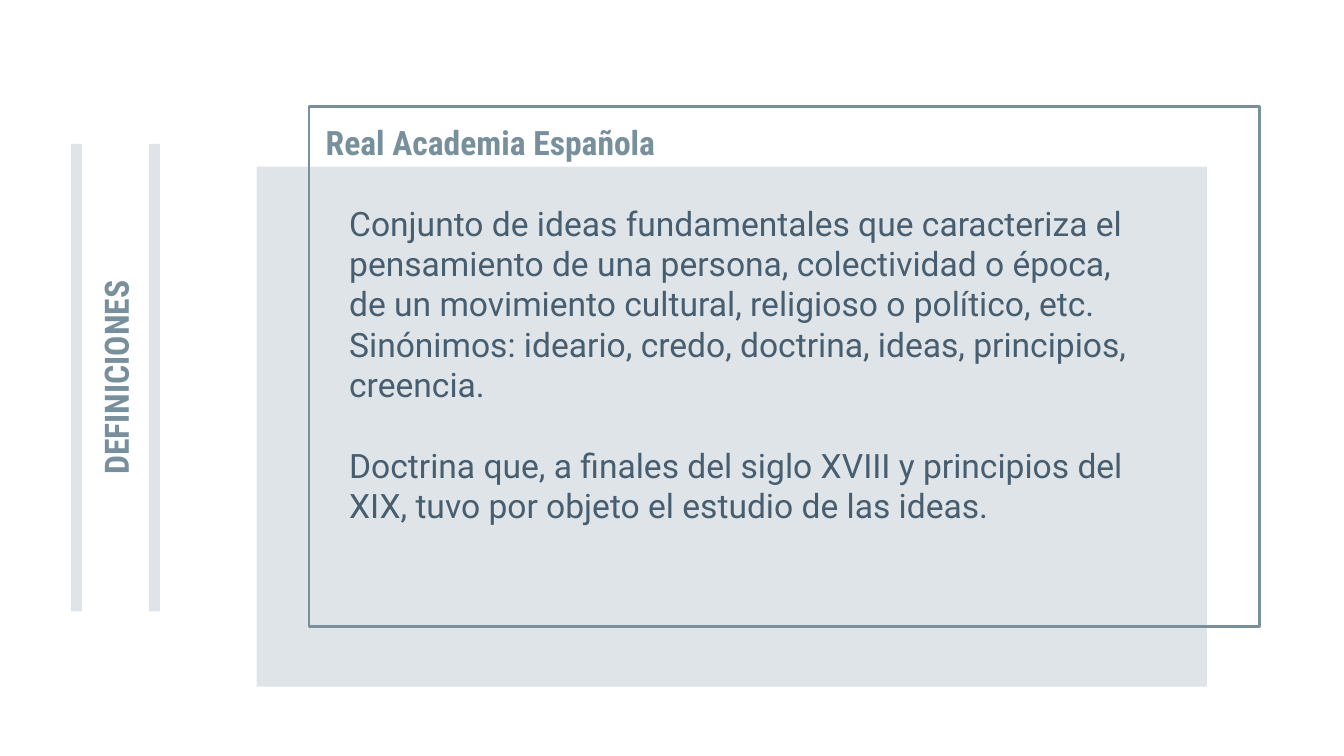
from lxml import etree
from pptx import Presentation
from pptx.dml.color import RGBColor
from pptx.enum.shapes import MSO_SHAPE
from pptx.enum.text import MSO_ANCHOR, PP_ALIGN
from pptx.oxml.ns import qn
from pptx.util import Inches, Pt

RECT = MSO_SHAPE.RECTANGLE
BOTTOM = MSO_ANCHOR.BOTTOM
CENTER = PP_ALIGN.CENTER

COLORS = {"accent": "78909C", "body": "475E70"}
HEADING_FONT = "Roboto Condensed"
BODY_FONT = "Roboto"
TEXT_SIZE = Pt(18)
BLANK_LINE = Pt(21.6)
TINT_ALPHA = 24  # percent

PANEL_SIZE = (7.07, 3.87)
HEADING_SIZE = (6.04, 0.8)
BAR_SIZE = (0.08, 3.48)

# Each definition is a list of paragraphs
DEFINITIONS = [
    [
        "Conjunto de ideas fundamentales que caracteriza el pensamiento de una "
        "persona, colectividad o época, de un movimiento cultural, religioso o "
        "político, etc.",
        "Sinónimos: ideario, credo, doctrina, ideas, principios, creencia.",
    ],
    [
        "Doctrina que, a finales del siglo XVIII y principios del XIX, tuvo por "
        "objeto el estudio de las ideas.",
    ],
]


def rgb(name):
    return RGBColor.from_string(COLORS[name])


class SlideBuilder:
    """Holds the current slide and draws its elements in the shared style."""

    def __init__(self, slide):
        self.shapes = slide.shapes

    def rect(self, x, y, size):
        s = self.shapes.add_shape(RECT, *map(Inches, (x, y, *size)))
        s.shadow.inherit = False
        return s

    def frame(self, x, y, size):
        s = self.rect(x, y, size)
        s.fill.background()
        s.line.color.rgb = rgb("accent")
        s.line.width = Pt(1.5)

    def tint(self, x, y, size):
        """Draw a translucent block without an outline."""
        s = self.rect(x, y, size)
        s.fill.solid()
        s.fill.fore_color.rgb = rgb("accent")
        s.line.fill.background()
        color = s.fill._xPr.find(qn("a:solidFill"))[0]
        etree.SubElement(color, qn("a:alpha"), val=str(TINT_ALPHA * 1000))

    def text_box(self, x, y, size):
        s = self.shapes.add_textbox(*map(Inches, (x, y, *size)))
        s.text_frame.word_wrap = True
        return s

    def style(self, p, font, color, bold=False):
        p.font.name = font
        p.font.size = TEXT_SIZE
        p.font.bold = bold
        p.font.color.rgb = rgb(color)

    def heading(self, text, x, y, rotation=0):
        s = self.text_box(x, y, HEADING_SIZE)
        s.rotation = rotation
        tf = s.text_frame
        tf.vertical_anchor = BOTTOM
        tf.margin_left = tf.margin_right = Inches(0.1)
        tf.margin_top = tf.margin_bottom = Inches(0.1)
        p = tf.paragraphs[0]
        p.text = text
        p.alignment = CENTER
        self.style(p, HEADING_FONT, "accent", bold=True)

    def definitions(self, groups, x, y, size):
        """Write the groups of paragraphs with a line of space between groups."""
        tf = self.text_box(x, y, size).text_frame
        for g, group in enumerate(groups):
            for i, text in enumerate(group):
                p = tf.paragraphs[0] if g == i == 0 else tf.add_paragraph()
                p.text = text
                if g > 0 and i == 0:
                    p.space_before = BLANK_LINE
                self.style(p, BODY_FONT, "body")


def main():
    prs = Presentation()
    prs.slide_width = Inches(10)
    prs.slide_height = prs.slide_width * 9 // 16
    builder = SlideBuilder(prs.slides.add_slide(prs.slide_layouts[6]))

    builder.frame(2.3, 0.79, PANEL_SIZE)
    builder.tint(1.91, 1.24, PANEL_SIZE)
    builder.heading("DEFINICIONES", -2.31, 2.41, rotation=270)
    for x in (0.53, 1.11):
        builder.tint(x, 1.07, BAR_SIZE)
    builder.definitions(DEFINITIONS, 2.5, 1.46, (6.04, 2.83))
    builder.heading("Real Academia Española", 0.63, 0.51)

    prs.save("out.pptx")


if __name__ == "__main__":
    main()
